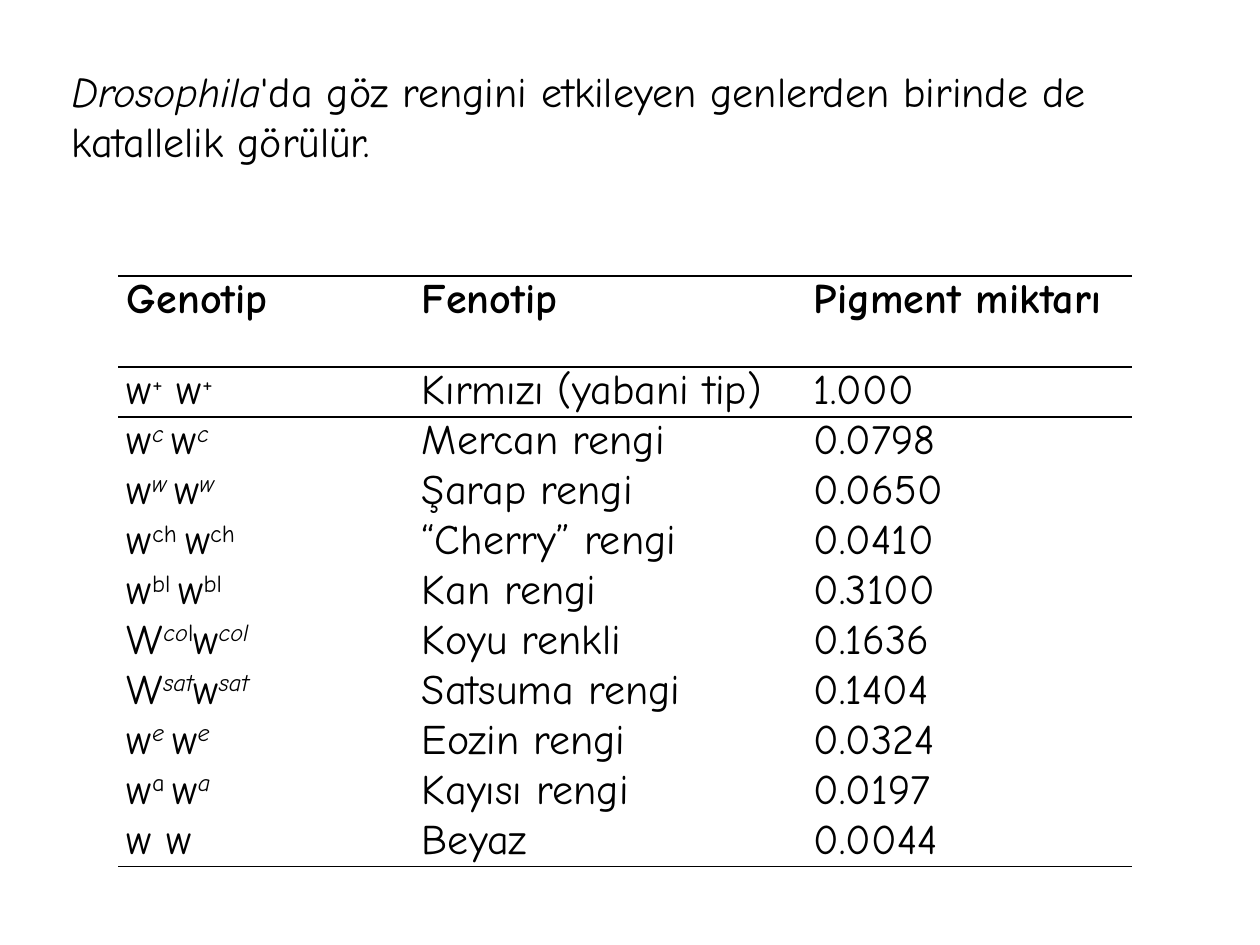
from dataclasses import dataclass

from lxml import etree
from pptx import Presentation
from pptx.dml.color import RGBColor
from pptx.enum.text import MSO_ANCHOR, MSO_AUTO_SIZE, PP_ALIGN
from pptx.oxml.ns import qn
from pptx.util import Emu, Pt

PX = 914400 // 126
TOP = MSO_ANCHOR.TOP
NO_FIT = MSO_AUTO_SIZE.NONE
LEFT, JUSTIFY = PP_ALIGN.LEFT, PP_ALIGN.JUSTIFY
TITLE_ONLY = 5
NO_GRID_STYLE = "{2D5ABB26-0587-4C30-8999-92F81FD0307C}"


@dataclass(frozen=True)
class Theme:
    font: str = "Comic Neue"
    size: int = 24
    ink: str = "000000"
    rule: int = 1


def px(length):
    return Emu(length * PX)


def write(frame, runs, theme, align=LEFT, bold=False):
    """Fill a frame with (text, marks) runs; marks: i = italic, s = superscript."""
    paragraph = frame.paragraphs[0]
    paragraph.alignment = align
    for text, marks in runs:
        run = paragraph.add_run()
        run.text = text
        font = run.font
        font.name, font.size = theme.font, Pt(theme.size)
        font.color.rgb = RGBColor.from_string(theme.ink)
        font.bold, font.italic = bold, "i" in marks
        if "s" in marks:
            run._r.get_or_add_rPr().set("baseline", "30000")


class SlideBuilder:
    def __init__(self, slide, theme):
        self.slide = slide
        self.theme = theme

    def title(self, runs, left, top, width, height):
        heading = self.slide.shapes.title
        heading.left, heading.top = px(left), px(top)
        heading.width, heading.height = px(width), px(height)
        frame = heading.text_frame
        frame.word_wrap, frame.auto_size = True, NO_FIT
        frame.vertical_anchor = TOP
        write(frame, runs, self.theme)
        frame.paragraphs[0].line_spacing = 1.0

    def rule(self, cell, tag):
        line = etree.SubElement(cell._tc.get_or_add_tcPr(), qn(tag),
                                w=str(Pt(self.theme.rule)))
        fill = etree.SubElement(line, qn("a:solidFill"))
        etree.SubElement(fill, qn("a:srgbClr"), val=self.theme.ink)

    def table(self, rows, left, top, widths, heights):
        table = self.slide.shapes.add_table(
            len(rows), len(widths), px(left), px(top),
            px(sum(widths)), px(sum(heights))).table
        table.first_row = table.horz_banding = False
        table._tbl.tblPr.find(qn("a:tableStyleId")).text = NO_GRID_STYLE
        for column, width in zip(table.columns, widths):
            column.width = px(width)
        for r, (row, height) in enumerate(zip(rows, heights)):
            table.rows[r].height = px(height)
            for c, runs in enumerate(row):
                cell = table.cell(r, c)
                cell.margin_left = cell.margin_right = px(9)
                cell.margin_top = cell.margin_bottom = 0
                # Rules above and below the header, and below the last row
                if r in (0, 1):
                    self.rule(cell, "a:lnT")
                if r in (0, len(rows) - 1):
                    self.rule(cell, "a:lnB")
                cell.fill.background()
                write(cell.text_frame, runs, self.theme, bold=r == 0,
                      align=LEFT if c == len(widths) - 1 else JUSTIFY)


HEADING = [
    ("Drosophila", "i"),
    ("'da göz rengini etkileyen genlerden birinde de katallelik görülür.", ""),
]
HEADER = ["Genotip", "Fenotip", "Pigment miktarı"]
W = ("w", "")
BIG_W = ("W", "")
# Genotype runs, phenotype, amount of pigment
ALLELES = [
    ([W, ("+", "s"), (" w", ""), ("+", "s")], "Kırmızı (yabani tip)", "1.000"),
    ([W, ("c ", "is"), W, ("c", "is")], "Mercan rengi", "0.0798"),
    ([W, ("w ", "is"), W, ("w", "is")], "Şarap rengi", "0.0650"),
    ([W, ("ch ", "s"), W, ("ch", "s")], "“Cherry” rengi", "0.0410"),
    ([W, ("bl ", "s"), W, ("bl", "s")], "Kan rengi", "0.3100"),
    ([BIG_W, ("co", "is"), ("l", "s"), W, ("col", "is")], "Koyu renkli", "0.1636"),
    ([BIG_W, ("sat", "is"), W, ("sat", "is")], "Satsuma rengi", "0.1404"),
    ([W, ("e ", "is"), W, ("e", "is")], "Eozin rengi", "0.0324"),
    ([W, ("a ", "s"), W, ("a", "is")], "Kayısı rengi", "0.0197"),
    ([("w w", "")], "Beyaz", "0.0044"),
]


def main():
    deck = Presentation()
    deck.slide_width, deck.slide_height = px(1260), px(945)
    slide = deck.slides.add_slide(deck.slide_layouts[TITLE_ONLY])
    builder = SlideBuilder(slide, Theme())

    # Heading sentence
    builder.title(HEADING, 59, 59, 1152, 115)

    # Table of eye colour alleles
    rows = [[[(label, "")] for label in HEADER]]
    rows += [[genotype, [(phenotype, "")], [(pigment, "")]]
             for genotype, phenotype, pigment in ALLELES]
    builder.table(rows, 118, 276, [295, 392, 327], [91] + [50] * len(ALLELES))

    deck.save("out.pptx")


if __name__ == "__main__":
    main()
